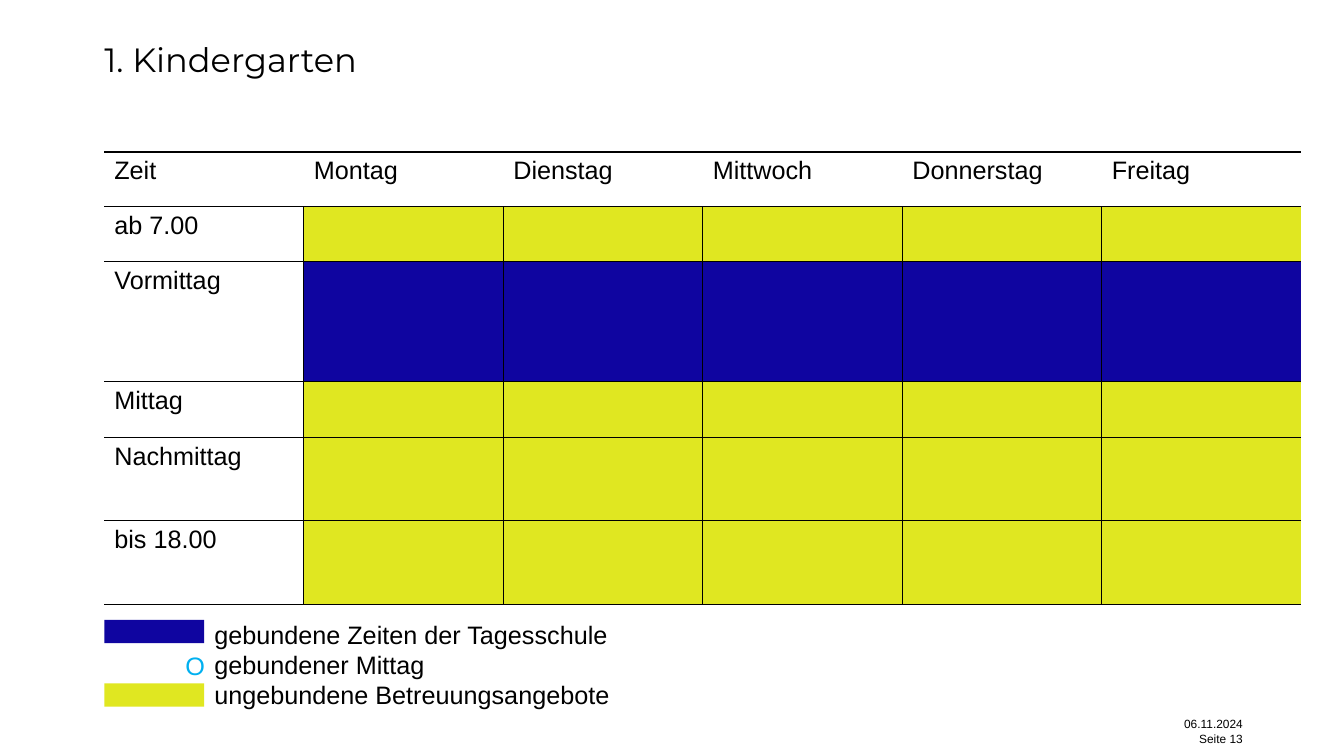
from pptx import Presentation
from pptx.dml.color import RGBColor
from pptx.enum.shapes import MSO_SHAPE
from pptx.enum.text import PP_ALIGN
from pptx.oxml.ns import qn
from pptx.util import Pt
from lxml.etree import SubElement

# Content
TITLE = "1. Kindergarten"
HEADER = ["Zeit", "Montag", "Dienstag", "Mittwoch", "Donnerstag", "Freitag"]
BLACK, WHITE, BLUE, YELLOW, CYAN = "000000", "FFFFFF", "0F05A0", "E0E721", "00B0F0"
HEADER_HEIGHT = 39
PERIODS = [  # label, row height, colour
    ("ab 7.00", 39.5, YELLOW),
    ("Vormittag", 85.7, BLUE),
    ("Mittag", 39.5, YELLOW),
    ("Nachmittag", 59.8, YELLOW),
    ("bis 18.00", 59.8, YELLOW),
]
LEGEND = ["gebundene Zeiten der Tagesschule", "gebundener Mittag",
          "ungebundene Betreuungsangebote"]
FOOTER = ["06.11.2024", "Seite 13"]

# Layout
LEFT = 74.5
TABLE_TOP = 108.6
COLUMN_WIDTH = 142.5
SWATCH_WIDTH, SWATCH_HEIGHT = 71.3, 16.6
SWATCH_TOPS = [(BLUE, 442.8), (YELLOW, 488.2)]


def color(value):
    return RGBColor.from_string(value)


def style(para, size, font="Arial", ink=BLACK):
    for span in para.runs:
        span.font.size = Pt(size)
        span.font.name = font
        span.font.color.rgb = color(ink)


def add_text(slide, area, lines, size, font="Arial", ink=BLACK, inset=None, wrap=True):
    box = slide.shapes.add_textbox(*map(Pt, area))
    frame = box.text_frame
    frame.word_wrap = wrap
    if inset is not None:
        frame.margin_left = frame.margin_right = Pt(inset)
        frame.margin_top = frame.margin_bottom = Pt(inset)
    frame.text = "\n".join(lines)
    for para in frame.paragraphs:
        style(para, size, font, ink)
    return frame


def set_borders(cell, widths):
    properties = cell._tc.get_or_add_tcPr()
    for position, (side, width) in enumerate(widths.items()):
        line = properties.makeelement(qn(f"a:{side}"), {"w": str(Pt(width))})
        properties.insert(position, line)
        if width:
            fill = SubElement(line, qn("a:solidFill"))
            SubElement(fill, qn("a:srgbClr"), val=BLACK)
        else:
            SubElement(line, qn("a:noFill"))


deck = Presentation()
deck.slide_width, deck.slide_height = Pt(960), Pt(540)
slide = deck.slides.add_slide(deck.slide_layouts[6])

# Footer and title
footer = add_text(slide, (808.6, 511.9, 79.2, 28), FOOTER, 8.5, inset=0)
for para in footer.paragraphs:
    para.alignment = PP_ALIGN.RIGHT
    para.line_spacing = Pt(10.5)
title = add_text(slide, (LEFT, 23.8, 813.6, 33.8), [TITLE], 24, "Montserrat", inset=0)
title.paragraphs[0].line_spacing = 1.13

# Timetable
heights = [HEADER_HEIGHT] + [height for _, height, _ in PERIODS]
last = len(HEADER) - 1
table = slide.shapes.add_table(len(heights), len(HEADER), Pt(LEFT), Pt(TABLE_TOP),
                               Pt(COLUMN_WIDTH * len(HEADER)), Pt(sum(heights))).table
table.first_row = table.horz_banding = False
for column in table.columns:
    column.width = Pt(COLUMN_WIDTH)
for row_index, height in enumerate(heights):
    table.rows[row_index].height = Pt(height)
    is_header = row_index == 0
    for column_index, day in enumerate(HEADER):
        cell = table.cell(row_index, column_index)
        fill = WHITE
        if is_header:
            cell.text = day
        elif column_index == 0:
            cell.text = PERIODS[row_index - 1][0]
        else:
            fill = PERIODS[row_index - 1][2]
        style(cell.text_frame.paragraphs[0], 18)
        cell.fill.solid()
        cell.fill.fore_color.rgb = color(fill)
        set_borders(cell, {
            "lnL": 0 if is_header or column_index == 0 else 1,
            "lnR": 0 if is_header or column_index == last else 1,
            "lnT": 2 if is_header else 1,
            "lnB": 1,
        })

# Legend
legend = add_text(slide, (146, 438.5, 623.5, 72.7), LEGEND[:1], 18)
legend.paragraphs[0].text = "\n".join(LEGEND[:2])
legend.add_paragraph().text = LEGEND[2]
for para in legend.paragraphs:
    style(para, 18)
for fill, top in SWATCH_TOPS:
    swatch = slide.shapes.add_shape(MSO_SHAPE.RECTANGLE, Pt(LEFT), Pt(top),
                                    Pt(SWATCH_WIDTH), Pt(SWATCH_HEIGHT))
    swatch.shadow.inherit = False
    swatch.fill.solid()
    swatch.fill.fore_color.rgb = color(fill)
    swatch.line.fill.background()
add_text(slide, (125.3, 460.8, 28.8, 29), ["O"], 18, ink=CYAN, wrap=False)

deck.save("out.pptx")
